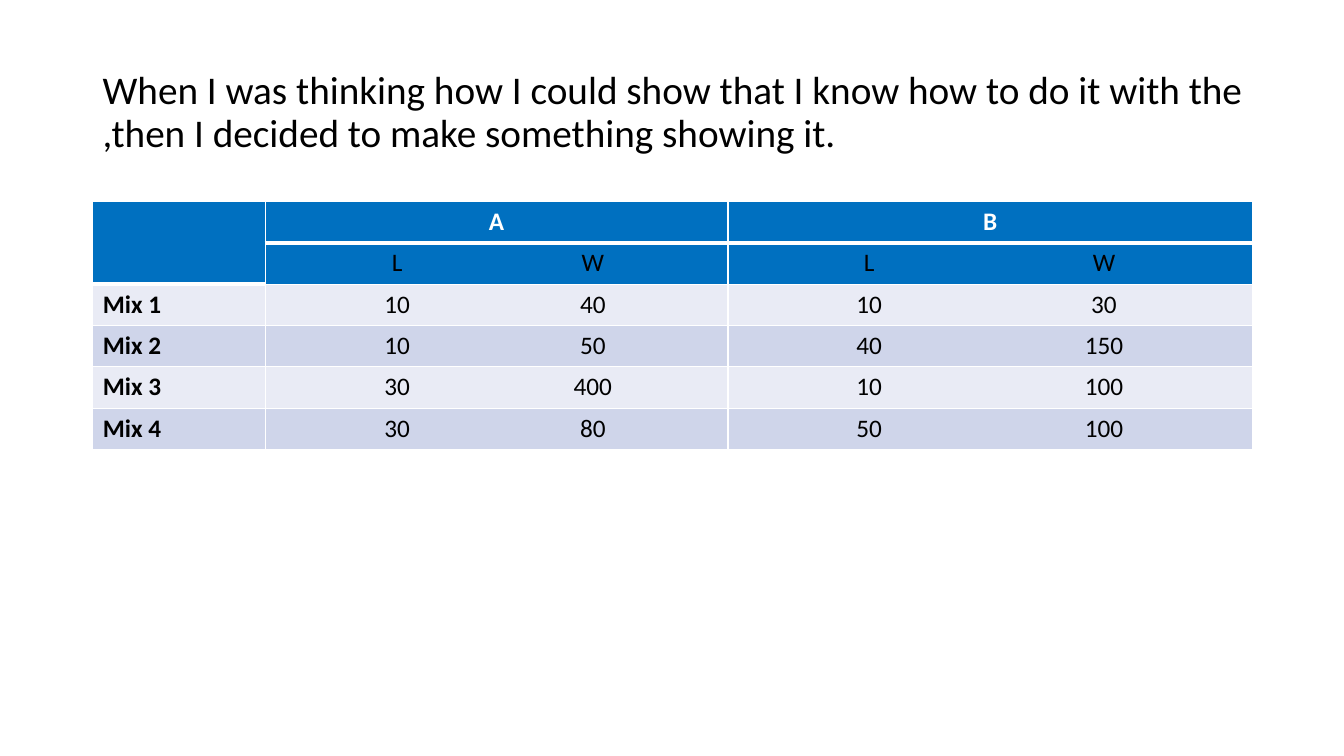
from lxml import etree
from pptx import Presentation
from pptx.dml.color import RGBColor
from pptx.enum.text import MSO_ANCHOR, PP_ALIGN
from pptx.oxml.ns import qn
from pptx.util import Inches, Pt

MIDDLE = MSO_ANCHOR.MIDDLE
LEFT, CENTER = PP_ALIGN.LEFT, PP_ALIGN.CENTER

THEME = {
    "font": "Calibri",
    "title_size": 28,
    "table_size": 18,
    "text": "000000",
    "line": "FFFFFF",
    "header": "0070C0",
    "bands": ("E9EBF5", "CFD5EA"),
}
THIN, THICK = 1, 3

TITLE = ("When I was thinking how I could show that I know how to do it with "
         "the ,then I decided to make something showing it.")
MIXES = [
    ("", "A", "B"),
    ("", "L\tW", "L\tW"),
    ("Mix 1", "10\t40", "10\t30"),
    ("Mix 2", "10\t50", "40\t150"),
    ("Mix 3", "30\t400", "10\t100"),
    ("Mix 4", "30\t80", "50\t100"),
]
COLUMN_WIDTHS = (1.71, 4.59, 5.2)
ROW_HEIGHT = 0.41
TAB_CENTERS = {1: (1.21, 3.15), 2: (1.3, 3.63)}


def write(paragraph, text, size, color, bold=False):
    run = paragraph.add_run()
    run.text = text
    font_format = {"name": THEME["font"], "size": Pt(size), "bold": bold}
    for attribute, value in font_format.items():
        setattr(run.font, attribute, value)
    run.font.color.rgb = RGBColor.from_string(color)


def add_border(cell, side, width):
    line = etree.SubElement(cell._tc.get_or_add_tcPr(), qn(f"a:ln{side}"), w=str(Pt(width)))
    fill = etree.SubElement(line, qn("a:solidFill"))
    etree.SubElement(fill, qn("a:srgbClr"), val=THEME["line"])


prs = Presentation()
prs.slide_width, prs.slide_height = Inches(13.33), Inches(7.5)
slide = prs.slides.add_slide(prs.slide_layouts[6])

title = slide.shapes.add_textbox(Inches(0.92), Inches(0.4), Inches(11.5), Inches(1.45)).text_frame
title.word_wrap = True
title.vertical_anchor = MIDDLE
title.paragraphs[0].line_spacing = 0.9
write(title.paragraphs[0], TITLE, THEME["title_size"], THEME["text"])

table = slide.shapes.add_table(
    len(MIXES), len(COLUMN_WIDTHS), Inches(0.92), Inches(2),
    Inches(sum(COLUMN_WIDTHS)), Inches(ROW_HEIGHT * len(MIXES))).table
for column, width in zip(table.columns, COLUMN_WIDTHS):
    column.width = Inches(width)
for row in table.rows:
    row.height = Inches(ROW_HEIGHT)

for r, mix in enumerate(MIXES):
    for c, text in enumerate(mix):
        cell = table.cell(r, c)
        # The thick rule runs below row 0, or below row 1 in the merged corner.
        rule_row = 1 if c == 0 else 0
        borders = {
            "L": THIN,
            "R": THIN,
            "T": THICK if r == rule_row + 1 else THIN,
            "B": THICK if r == rule_row or (r, c) == (0, 0) else THIN,
        }
        for side, width in borders.items():
            add_border(cell, side, width)
        cell.fill.solid()
        cell.fill.fore_color.rgb = RGBColor.from_string(
            THEME["header"] if r < 2 else THEME["bands"][r % 2])

        paragraph = cell.text_frame.paragraphs[0]
        paragraph.alignment = CENTER if r == 0 else LEFT
        if "\t" in text:
            text = "\t" + text
            tabs = etree.SubElement(paragraph._p.get_or_add_pPr(), qn("a:tabLst"))
            for center in TAB_CENTERS[c]:
                etree.SubElement(tabs, qn("a:tab"), pos=str(Inches(center)), algn="ctr")
        if text:
            write(paragraph, text, THEME["table_size"],
                  THEME["line"] if r == 0 else THEME["text"], bold=r == 0 or c == 0)

table.cell(0, 0).merge(table.cell(1, 0))

prs.save("out.pptx")
